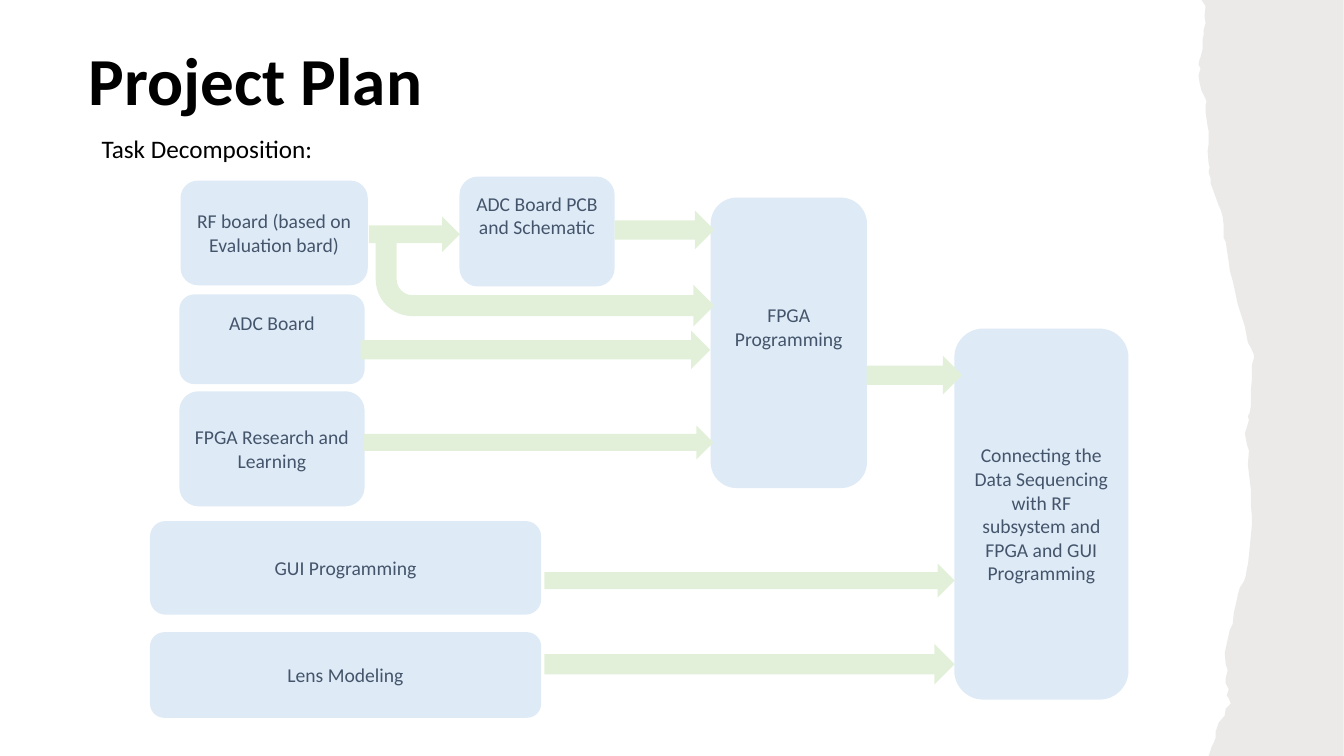
from lxml import etree
from pptx import Presentation
from pptx import util as u
from pptx.dml.color import RGBColor
from pptx.enum import shapes, text
from pptx.oxml import ns

HUES = {"ink": "000000", "label": "44546A", "task": "DEEBF7",
        "flow": "E2F0D9", "paper": "82766A"}
FONT = "Calibri"
PAD = 0.13    # usual inset above and below text, cm
LIFT = 0.82   # extra inset that raises a label, cm

# Task boxes: label, left, top, width, height, raised label
TASKS = [
    ("RF board (based on Evaluation bard)", 0.77, 0.1, 4.72, 2.64, False),
    ("ADC Board", 0.74, 2.97, 4.67, 2.26, True),
    ("FPGA Research and Learning", 0.74, 5.41, 4.67, 2.9, False),
    ("GUI Programming", 0, 8.68, 9.86, 2.36, False),
    ("Lens Modeling", 0, 11.48, 9.86, 2.16, False),
    ("ADC Board PCB and Schematic", 7.8, 0, 3.91, 2.77, True),
    ("FPGA Programming", 14.13, 0.53, 3.94, 7.32, True),
    ("Connecting the Data Sequencing with RF subsystem and FPGA and GUI "
     "Programming", 20.27, 3.83, 4.39, 9.35, False),
]

# Arrows: left, top, width, height
STRAIGHT = [
    (5.52, 1.01, 2.29, 0.89),
    (5.31, 3.88, 8.81, 0.97),
    (5.39, 6.27, 8.81, 0.86),
    (11.71, 0.86, 2.51, 0.97),
    (9.94, 9.75, 10.34, 0.86),
    (9.94, 11.78, 10.34, 1.02),
    (18.06, 4.52, 2.41, 0.97),
]
BENT = (5.69, 1.67, 8.53, 2.11)

# Torn edge from bottom to top, on a grid 750 units high
GRID = 750
TEAR = [
    (11, 750), (14, 741), (16, 737), (18, 732), (18, 726), (21, 717),
    (27, 710), (28, 703), (33, 698), (31, 693), (29, 690), (31, 684),
    (28, 678), (28, 673), (30, 665), (28, 659), (27, 648), (32, 625),
    (35, 619), (36, 608), (39, 595), (40, 590), (42, 583), (46, 577),
    (48, 571), (49, 564), (50, 560), (51, 551), (52, 541), (53, 531),
    (54, 520), (54, 513), (53, 501), (53, 486), (52, 478), (50, 461),
    (51, 447), (49, 441), (47, 430), (48, 427), (51, 417), (50, 413),
    (52, 409), (53, 402), (53, 387), (54, 376), (54, 362), (56, 355),
    (56, 352), (53, 345), (50, 340), (47, 324), (40, 302), (35, 279),
    (33, 272), (32, 268), (31, 260), (29, 247), (28, 240), (26, 236),
    (26, 232), (26, 224), (25, 215), (23, 208), (21, 204), (16, 190),
    (13, 182), (13, 177), (11, 171), (12, 166), (11, 162), (10, 150),
    (11, 143), (11, 130), (10, 125), (8, 111), (8, 104), (9, 101),
    (8, 98), (4, 90), (2, 82), (1, 75), (3, 68), (1, 64), (2, 59),
    (3, 57), (5, 49), (5, 39), (6, 35), (6, 30), (8, 23), (7, 16),
    (8, 6), (4, 0),
]


def paint(shape, hue):
    shape.shadow.inherit = False
    shape.fill.solid()
    shape.fill.fore_color.rgb = RGBColor.from_string(HUES[hue])
    shape.line.fill.background()


def write(para, words, size, hue, bold=False):
    run = para.add_run()
    run.text = words
    run.font.name = FONT
    run.font.size = u.Pt(size)
    run.font.bold = bold
    run.font.color.rgb = RGBColor.from_string(HUES[hue])


def place(slide, kind, box, hue):
    shape = slide.shapes.add_shape(kind, *map(u.Cm, box))
    paint(shape, hue)
    return shape


def line(slide, box, words, size, bold=False, anchor=text.MSO_ANCHOR.TOP):
    """One line of heading text."""
    frame = slide.shapes.add_textbox(*map(u.Cm, box)).text_frame
    frame.word_wrap = True
    frame.vertical_anchor = anchor
    para = frame.paragraphs[0]
    write(para, words, size, "ink", bold)
    return para


def edge(slide, box):
    """Torn paper along the right side."""
    left, top, wide, high = map(u.Cm, box)
    unit = high / GRID
    right = round(wide / unit)
    form = slide.shapes.build_freeform(*TEAR[0], scale=unit)
    form.add_line_segments(TEAR[1:] + [(right, 0), (right, GRID)], close=True)
    paper = form.convert_to_shape(left, top)
    paint(paper, "paper")
    tone = paper.fill._xPr.find(".//" + ns.qn("a:srgbClr"))
    etree.SubElement(tone, ns.qn("a:alpha"), val="15000")


def task(slide, box, label, raised):
    shape = place(slide, shapes.MSO_SHAPE.ROUNDED_RECTANGLE, box, "task")
    frame = shape.text_frame
    frame.word_wrap = True
    frame.vertical_anchor = text.MSO_ANCHOR.MIDDLE
    frame.margin_bottom = u.Cm(PAD + LIFT * raised)
    para = frame.paragraphs[0]
    para.alignment = text.PP_ALIGN.CENTER
    write(para, label, 14, "label")


def chart(slide, left, top):
    """Task boxes and the arrows that join them."""
    def shift(x, y, wide, high):
        return left + x, top + y, wide, high

    for label, *box, raised in TASKS:
        task(slide, shift(*box), label, raised)
    for box in STRAIGHT:
        place(slide, shapes.MSO_SHAPE.RIGHT_ARROW, shift(*box), "flow")
    bent = place(slide, shapes.MSO_SHAPE.BENT_ARROW, shift(*BENT), "flow")
    bent._element.spPr.xfrm.set("flipV", "1")


def main():
    deck = Presentation()
    deck.slide_width, deck.slide_height = u.Cm(33.87), u.Cm(19.05)
    slide = deck.slides.add_slide(deck.slide_layouts[6])

    # Headings and background
    title = line(slide, (1.98, 0.79, 25.63, 2.64), "Project Plan", 48,
                 True, text.MSO_ANCHOR.MIDDLE)
    title.line_spacing = 0.9
    edge(slide, (30.18, 0, 3.69, 19.05))
    line(slide, (2.31, 3.23, 19.35, 1.02), "Task Decomposition:", 18)

    # Flow of tasks
    chart(slide, 3.78, 4.45)
    deck.save("out.pptx")


if __name__ == "__main__":
    main()
